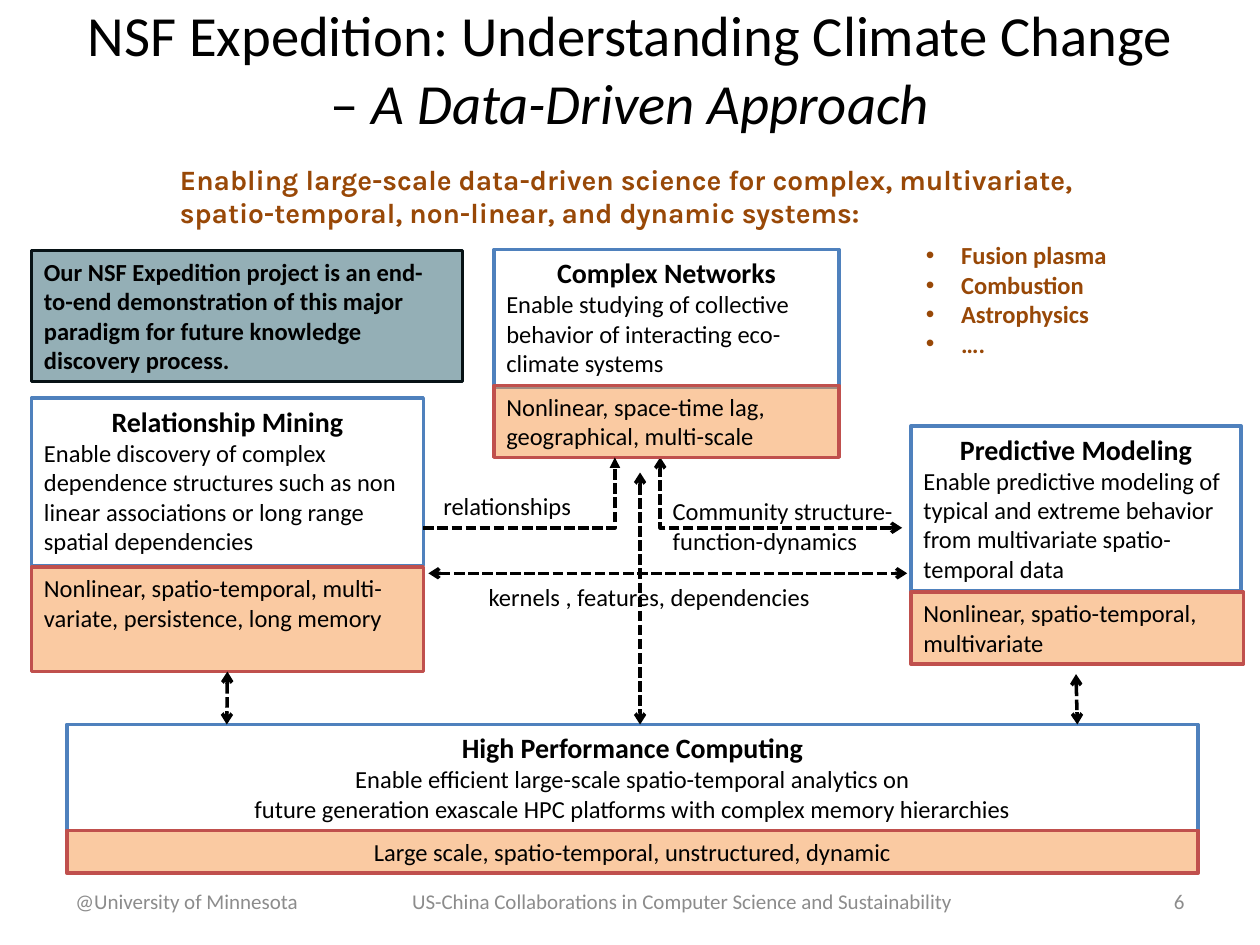
from lxml import etree
from pptx import Presentation, util as u
from pptx.dml.color import RGBColor
from pptx.enum import dml, shapes, text
from pptx.oxml import ns

BLACK = RGBColor(0x00, 0x00, 0x00)
WHITE = RGBColor(0xFF, 0xFF, 0xFF)
BLUE = RGBColor(0x4F, 0x81, 0xBD)
RED = RGBColor(0xC0, 0x50, 0x4D)
ORANGE = RGBColor(0xF7, 0x96, 0x46)
TEAL = RGBColor(0x21, 0x59, 0x68)
INK = RGBColor(0x07, 0x12, 0x15)
BROWN = RGBColor(0x98, 0x48, 0x07)
GREY = RGBColor(0x8C, 0x8C, 0x8C)
LEFT, CENTER, RIGHT = text.PP_ALIGN.LEFT, text.PP_ALIGN.CENTER, text.PP_ALIGN.RIGHT
TOP, MIDDLE = text.MSO_ANCHOR.TOP, text.MSO_ANCHOR.MIDDLE


def add(parent, tag, **attrs):
    return etree.SubElement(parent, ns.qn(tag), attrs)


def write(para, words, size=14, color=BLACK, face="Calibri", bold=False, slant=False):
    run = para.add_run()
    run.text = words
    font = run.font
    font.size, font.name, font.bold, font.italic = u.Pt(size), face, bold, slant
    font.color.rgb = color


class Board:
    def __init__(self, slide, size=14, width=2):
        self.slide, self.size, self.width = slide, size, width

    def fill_text(self, frame, lines, align=LEFT, anchor=TOP, **style):
        frame.word_wrap = True
        frame.vertical_anchor = anchor
        for i, line in enumerate(lines):
            para = frame.add_paragraph() if i else frame.paragraphs[0]
            para.alignment = align
            write(para, line, **{"size": self.size, **style})
        return frame

    def label(self, place, *lines, **style):
        box = self.slide.shapes.add_textbox(*map(u.Inches, place))
        return self.fill_text(box.text_frame, lines, **style)

    def box(self, place, lines, fill=WHITE, edge=BLUE, alpha=100, width=None, **style):
        rect = self.slide.shapes.add_shape(shapes.MSO_SHAPE.RECTANGLE, *map(u.Inches, place))
        rect.shadow.inherit = False
        rect.fill.solid()
        rect.fill.fore_color.rgb = fill
        if alpha < 100:
            tint = rect.fill._xPr.find(".//" + ns.qn("a:srgbClr"))
            add(tint, "a:alpha", val=str(alpha * 1000))
        rect.line.color.rgb = edge
        rect.line.width = u.Pt(width or self.width)
        self.fill_text(rect.text_frame, lines, **style)
        return rect

    def topic(self, place, title, lines, traits, lower, align=LEFT):
        top = self.box(place, lines, align=align)
        para = top.text_frame.paragraphs[0]._p
        para.addprevious(etree.fromstring(etree.tostring(para)))
        head = top.text_frame.paragraphs[0]
        head.clear()
        head.alignment = CENTER
        write(head, title, size=16, bold=True)
        return self.box(lower, [traits], fill=ORANGE, edge=RED, alpha=50, align=align)

    def arrow(self, start, end, head="arrow", tail="arrow", bent=False):
        kind = shapes.MSO_CONNECTOR.ELBOW if bent else shapes.MSO_CONNECTOR.STRAIGHT
        link = self.slide.shapes.add_connector(kind, *map(u.Inches, start + end))
        link.line.color.rgb = BLACK
        link.line.width = u.Pt(self.width)
        link.line.dash_style = dml.MSO_LINE.SQUARE_DOT
        props = link._element.spPr
        if bent:
            props.find(ns.qn("a:prstGeom")).set("prst", "bentConnector2")
        stroke = props.find(ns.qn("a:ln"))
        add(stroke, "a:headEnd", type=head)
        add(stroke, "a:tailEnd", type=tail)
        add(props, "a:effectLst")
        return link

    def bullets(self, place, items, **style):
        frame = self.label(place, *items, **style)
        for para in frame.paragraphs:
            props = para._p.get_or_add_pPr()
            props.set("marL", str(u.Inches(0.28)))
            props.set("indent", str(-u.Inches(0.28)))
            add(props, "a:buFont", typeface="Arial")
            add(props, "a:buChar", char="•")


def main():
    deck = Presentation()
    deck.slide_width, deck.slide_height = u.Inches(10), u.Inches(7.5)
    board = Board(deck.slides.add_slide(deck.slide_layouts[6]))

    board.arrow((7.16, 4.19), (5.24, 3.63), bent=True)
    board.topic((0.53, 5.75, 8.98, 0.84), "High Performance Computing",
                ["Enable efficient large-scale spatio-temporal analytics on",
                 "future generation exascale HPC platforms with complex memory hierarchies"],
                "Large scale, spatio-temporal, unstructured, dynamic",
                (0.53, 6.59, 8.98, 0.34), align=CENTER)
    board.arrow((5.08, 3.75), (5.08, 5.75))
    board.arrow((8.54, 5.35), (8.55, 5.75))
    board.arrow((3.4, 4.55), (7.2, 4.55))
    board.label((3.78, 4.57, 3.06, 0.33), "kernels , features, dependencies")

    mining = board.topic((0.25, 3.16, 3.11, 1.33), "Relationship Mining",
                         ["Enable discovery of complex dependence structures such as non "
                          "linear associations or long range spatial dependencies"],
                         "Nonlinear, spatio-temporal, multi-variate, persistence, long memory",
                         (0.25, 4.5, 3.11, 0.83))
    board.topic((7.23, 3.38, 2.62, 1.31), "Predictive Modeling",
                ["Enable predictive modeling of typical and extreme behavior "
                 "from multivariate spatio-temporal data"],
                "Nonlinear, spatio-temporal, multivariate", (7.23, 4.7, 2.64, 0.57))
    board.arrow((1.81, 5.33), (1.8, 5.75)).begin_connect(mining, 2)
    board.topic((3.92, 1.98, 2.74, 1.09), "Complex Networks",
                ["Enable studying of collective behavior of interacting eco-climate systems"],
                "Nonlinear, space-time lag, geographical, multi-scale",
                (3.92, 3.06, 2.74, 0.57))

    board.label((3.42, 3.85, 1.3, 0.34), "relationships")
    board.arrow((3.36, 4.19), (4.88, 3.63), head="none", tail="triangle", bent=True)
    board.label((5.24, 3.89, 2.08, 0.57), "Community structure- function-dynamics")
    board.label((1.33, 1.24, 7.75, 0.64),
                "Enabling large-scale data-driven science for complex, multivariate, "
                "spatio-temporal, non-linear, and dynamic systems:",
                size=16, face="Karla", color=BROWN, bold=True)
    board.bullets((7.25, 1.86, 1.83, 1.04),
                  ["Fusion plasma", "Combustion", "Astrophysics", "…."],
                  color=BROWN, bold=True)
    board.box((0.25, 1.99, 3.42, 1.04),
              ["Our NSF Expedition project is an end-to-end demonstration of this major "
               "paradigm for future knowledge discovery process."],
              fill=TEAL, edge=INK, alpha=48, width=1.5, bold=True)

    for left, width, words, align in (
        (0.5, 2.33, "@University of Minnesota", LEFT),
        (3.08, 4.67, "US-China Collaborations in Computer Science and Sustainability", CENTER),
        (8.08, 1.42, "6", RIGHT),
    ):
        board.label((left, 6.95, width, 0.4), words, size=12, color=GREY,
                    align=align, anchor=MIDDLE)

    title = board.label((0.5, 0.38, 9, 0.87),
                        "NSF Expedition: Understanding Climate Change – ",
                        size=32.4, align=CENTER, anchor=MIDDLE)
    title.margin_bottom = u.Inches(0.6)
    write(title.paragraphs[0], "A Data-Driven Approach", size=32.4, slant=True)
    deck.save("out.pptx")


if __name__ == "__main__":
    main()
